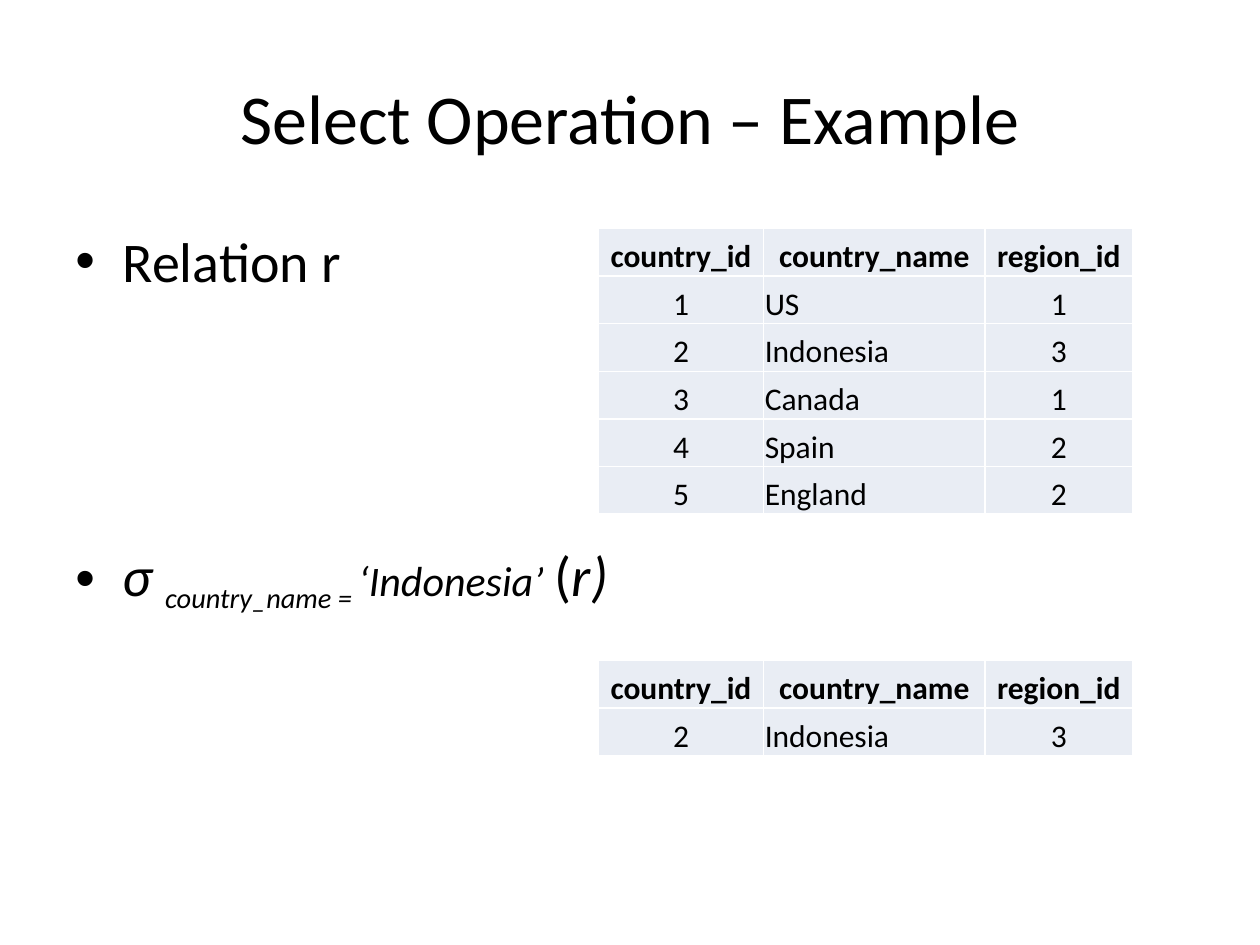
from lxml import etree
from pptx import Presentation
from pptx import util as u
from pptx.dml import color
from pptx.enum import text
from pptx.oxml import ns

Pt = u.Pt
FONT = "Calibri"
COLORS = {"ink": "000000", "cell": "E9EDF4", "rule": "FFFFFF"}
COLUMNS = (94.3, 126.7, 84.2)
ROW_HEIGHT = 27.24
HEADER = ("country_id", "country_name", "region_id")
COUNTRIES = [
    ("1", "US", "1"),
    ("2", "Indonesia", "3"),
    ("3", "Canada", "1"),
    ("4", "Spain", "2"),
    ("5", "England", "2"),
]
RELATION = [("Relation r", 32, False, 0)]
SELECTION = [
    ("σ ", 32, True, 0),
    ("country_name = ", 28, True, -25),
    ("‘Indonesia’", 24, True, 0),
    (" ", 28, True, 0),
    ("(", 32, False, 0),
    ("r)", 32, True, 0),
]


def rgb(name):
    """Return the named colour."""
    return color.RGBColor.from_string(COLORS[name])


def add_run(para, words, size, bold=False, italic=False, baseline=0):
    """Append one formatted run, with its baseline shift in percent."""
    span = para.add_run()
    span.text = words
    font = span.font
    font.name, font.size, font.bold, font.italic = FONT, Pt(size), bold, italic
    font.color.rgb = rgb("ink")
    if baseline:
        span._r.get_or_add_rPr().set("baseline", str(baseline * 1000))


def add_title(page, words, left, top, width, height):
    """Place and fill the title placeholder."""
    box = page.shapes.title
    box.left, box.top, box.width, box.height = map(Pt, (left, top, width, height))
    box.text_frame.vertical_anchor = text.MSO_ANCHOR.MIDDLE
    para = box.text_frame.paragraphs[0]
    para.alignment = text.PP_ALIGN.CENTER
    add_run(para, words, 40)


def add_bullets(page, items, gap, left, top, width, height):
    """Add a bulleted list with an even gap between its items."""
    box = page.shapes.add_textbox(*map(Pt, (left, top, width, height)))
    frame = box.text_frame
    frame.word_wrap = True
    for index, spans in enumerate(items):
        para = frame.add_paragraph() if index else frame.paragraphs[0]
        para.space_before = Pt(gap if index else 0)
        props = para._p.get_or_add_pPr()
        props.set("marL", str(Pt(27)))
        props.set("indent", str(-Pt(27)))
        etree.SubElement(props, ns.qn("a:buFont"), typeface="Arial")
        etree.SubElement(props, ns.qn("a:buChar"), char="•")
        for words, size, italic, baseline in spans:
            add_run(para, words, size, italic=italic, baseline=baseline)


def format_cell(cell, words, bold, centered):
    """Fill one table cell and draw its borders."""
    props = cell._tc.get_or_add_tcPr()
    for side in ("lnL", "lnR", "lnT", "lnB"):
        line = etree.SubElement(props, ns.qn(f"a:{side}"), w=str(Pt(1)))
        fill = etree.SubElement(line, ns.qn("a:solidFill"))
        etree.SubElement(fill, ns.qn("a:srgbClr"), val=COLORS["rule"])
    cell.fill.solid()
    cell.fill.fore_color.rgb = rgb("cell")
    cell.margin_left = cell.margin_right = cell.margin_top = Pt(0.75)
    cell.margin_bottom = Pt(0)
    cell.vertical_anchor = text.MSO_ANCHOR.BOTTOM
    para = cell.text_frame.paragraphs[0]
    para.alignment = text.PP_ALIGN.CENTER if centered else text.PP_ALIGN.LEFT
    add_run(para, words, 18, bold=bold)


def add_relation(page, records, left, top):
    """Add a relation as a table with a header row."""
    rows = [HEADER, *records]
    size = (sum(COLUMNS), ROW_HEIGHT * len(rows))
    table = page.shapes.add_table(
        len(rows), len(COLUMNS), *map(Pt, (left, top, *size))
    ).table
    table.first_row = table.horz_banding = False
    for column, width in zip(table.columns, COLUMNS):
        column.width = Pt(width)
    for row, values in enumerate(rows):
        table.rows[row].height = Pt(ROW_HEIGHT)
        for column, words in enumerate(values):
            header = row == 0
            format_cell(table.cell(row, column), words, header, header or column != 1)


def main():
    """Build and save the deck."""
    deck = Presentation()
    deck.slide_width, deck.slide_height = Pt(720), Pt(540)
    page = deck.slides.add_slide(deck.slide_layouts[5])
    add_title(page, "Select Operation – Example", 36, 21.6, 648, 90)
    add_bullets(page, [RELATION, SELECTION], 141, 36, 126, 360, 356.4)
    add_relation(page, COUNTRIES, 342, 130.5)
    chosen = [record for record in COUNTRIES if record[1] == "Indonesia"]
    add_relation(page, chosen, 342, 377.5)
    deck.save("out.pptx")


if __name__ == "__main__":
    main()
